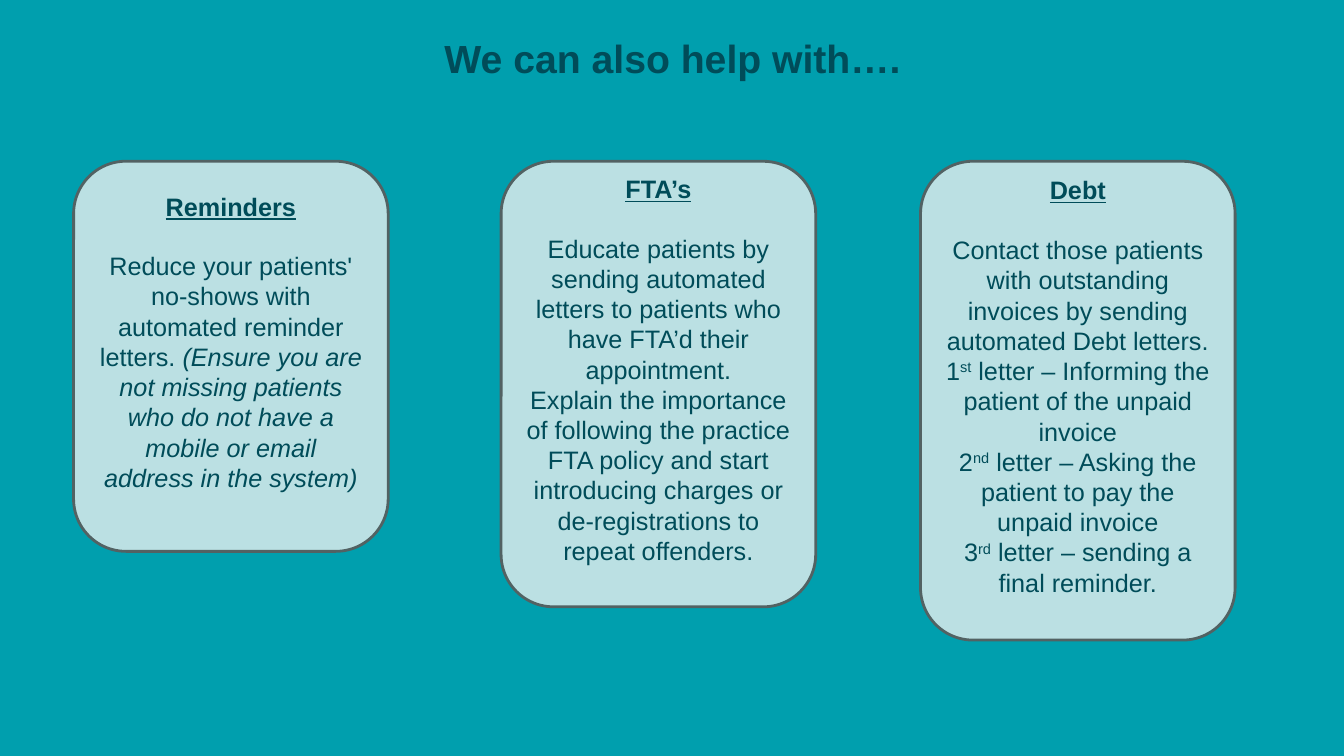
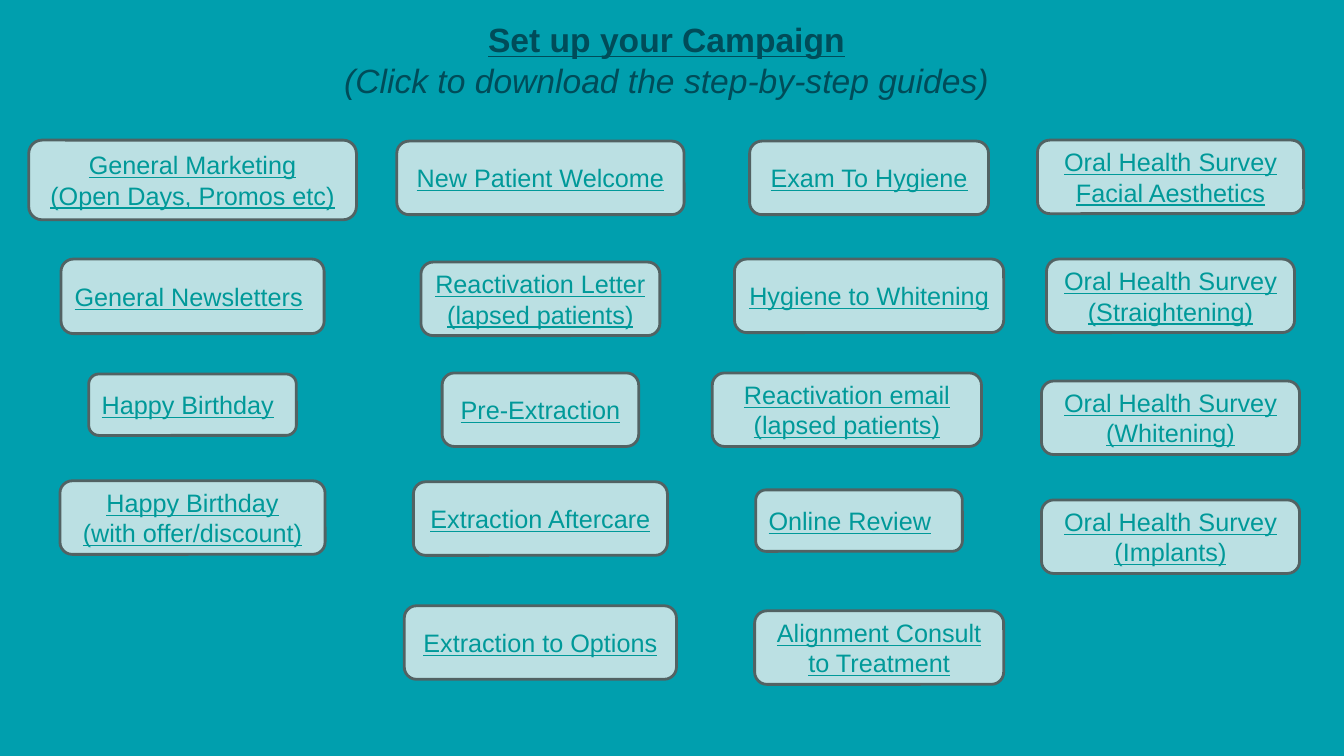
from pptx import Presentation
from pptx import util as u
from pptx.dml.color import RGBColor
from pptx.enum import shapes, text

BACKGROUND = RGBColor(0x00, 0x9F, 0xAE)
INK = RGBColor(0x00, 0x4C, 0x59)
LINK = RGBColor(0x00, 0x99, 0x99)
PANEL = RGBColor(0xBB, 0xE0, 0xE3)
OUTLINE = RGBColor(0x52, 0x62, 0x63)
FONT = "Arial"
CENTER, LEFT = text.PP_ALIGN.CENTER, text.PP_ALIGN.LEFT

prs = Presentation()
prs.slide_width, prs.slide_height = u.Inches(13.33), u.Inches(7.5)
prs.slide_master.background.fill.solid()
prs.slide_master.background.fill.fore_color.rgb = BACKGROUND
title_only = prs.slide_layouts.get_by_name("Title Only")


def add_titled_slide(heading, box, size):
    """Add a slide whose title has a bold first line."""
    slide = prs.slides.add_slide(title_only)
    title = slide.shapes.title
    title.left, title.top, title.width, title.height = map(u.Inches, box)
    frame = title.text_frame
    frame.text = heading
    frame.word_wrap = False
    frame.auto_size = text.MSO_AUTO_SIZE.SHAPE_TO_FIT_TEXT
    frame.vertical_anchor = text.MSO_ANCHOR.TOP
    for paragraph in frame.paragraphs:
        paragraph.alignment = CENTER
        font = paragraph.runs[0].font
        font.name, font.size, font.color.rgb = FONT, u.Pt(size), INK
    frame.paragraphs[0].runs[0].font.bold = True
    return slide


def add_panel(slide, box, label, color, align=CENTER):
    """Add a rounded panel with underlined text and return its frame."""
    panel = slide.shapes.add_shape(shapes.MSO_SHAPE.ROUNDED_RECTANGLE,
                                   *map(u.Inches, box))
    panel.shadow.inherit = False
    panel.fill.solid()
    panel.fill.fore_color.rgb = PANEL
    panel.line.color.rgb = OUTLINE
    panel.line.width = u.Pt(2)
    frame = panel.text_frame
    frame.text = label
    frame.word_wrap = True
    frame.vertical_anchor = text.MSO_ANCHOR.MIDDLE
    for paragraph in frame.paragraphs:
        paragraph.alignment = align
        font = paragraph.font
        font.name, font.size, font.color.rgb = FONT, u.Pt(18), color
        paragraph.runs[0].font.underline = True
    return frame


# Slide 1: three services, each paragraph a list of (text, style) runs
services = [
    ("Reminders", 0.73, 3.87, [
        [("Reduce your patients' no-shows with automated reminder letters. ", ""),
         ("(Ensure you are not missing patients who do not have a mobile "
          "or email address in the system)", "italic")]]),
    ("FTA’s", 4.97, 4.42, [
        [("Educate patients by sending automated letters to patients who "
          "have FTA’d their appointment.", "")],
        [("Explain the importance of following the practice FTA policy and "
          "start introducing charges or de-registrations to repeat "
          "offenders.", "")]]),
    ("Debt", 9.13, 4.75, [
        [("Contact those patients with outstanding invoices by sending "
          "automated Debt letters.", "")],
        [("1", ""), ("st", "super"),
         (" letter – Informing the patient of the unpaid invoice", "")],
        [("2", ""), ("nd", "super"),
         (" letter – Asking the patient to pay the unpaid invoice", "")],
        [("3", ""), ("rd", "super"),
         (" letter – sending a final reminder.", "")]]),
]
help_slide = add_titled_slide("We can also help with….",
                              (4.28, 0.29, 4.78, 0.57), 28)
for name, left, height, body in services:
    frame = add_panel(help_slide, (left, 1.6, 3.12, height), name, INK)
    frame.margin_bottom = u.Inches(0.34)
    frame.paragraphs[0].runs[0].font.bold = True
    frame.paragraphs[0].space_after = u.Pt(21)
    for pieces in body:
        paragraph = frame.add_paragraph()
        paragraph.alignment = CENTER
        for words, style in pieces:
            run = paragraph.add_run()
            run.text = words
            run.font.name, run.font.size = FONT, u.Pt(18)
            run.font.color.rgb = INK
            if style == "italic":
                run.font.italic = True
            elif style == "super":
                run.font._element.set("baseline", "30000")

# Slide 2: four columns of guides, as (label, top, width, height)
campaigns = [
    (1.91, [("General Marketing\n(Open Days, Promos etc)", 1.39, 3.25, 0.79),
            ("General Newsletters", 2.57, 2.61, 0.74),
            ("Happy Birthday", 3.71, 2.06, 0.61),
            ("Happy Birthday\n(with offer/discount)", 4.77, 2.63, 0.73)]),
    (5.36, [("New Patient Welcome", 1.4, 2.85, 0.73),
            ("Reactivation Letter\n(lapsed patients)", 2.6, 2.37, 0.73),
            ("Pre-Extraction", 3.7, 1.95, 0.73),
            ("Extraction Aftercare", 4.78, 2.52, 0.73),
            ("Extraction to Options", 6.01, 2.7, 0.73)]),
    (8.62, [("Exam To Hygiene", 1.4, 2.37, 0.73),
            ("Hygiene to Whitening", 2.57, 2.67, 0.73),
            ("Reactivation email\n(lapsed patients)", 3.7, 2.67, 0.73),
            ("Online Review", 4.86, 2.05, 0.61),
            ("Alignment Consult to Treatment", 6.06, 2.47, 0.73)]),
    (11.61, [("Oral Health Survey\nFacial Aesthetics", 1.39, 2.64, 0.73),
             ("Oral Health Survey\n(Straightening)", 2.57, 2.46, 0.73),
             ("Oral Health Survey\n(Whitening)", 3.78, 2.56, 0.73),
             ("Oral Health Survey\n(Implants)", 4.96, 2.56, 0.73)]),
]
left_aligned = {"General Newsletters", "Happy Birthday", "Online Review"}
off_center = {"Reactivation email\n(lapsed patients)": -0.22,
              "Online Review": -0.1,
              "Alignment Consult to Treatment": 0.1}

campaign_slide = add_titled_slide(
    "Set up your Campaign\n(Click to download the step-by-step guides)",
    (3.28, 0.14, 6.66, 0.91), 24)
heading, hint = campaign_slide.shapes.title.text_frame.paragraphs
heading.runs[0].font.underline = True
hint.runs[0].font.italic = True

for center, guides in campaigns:
    for label, top, width, height in guides:
        left = center + off_center.get(label, 0) - width / 2
        add_panel(campaign_slide, (left, top, width, height), label, LINK,
                  LEFT if label in left_aligned else CENTER)

prs.save("out.pptx")
